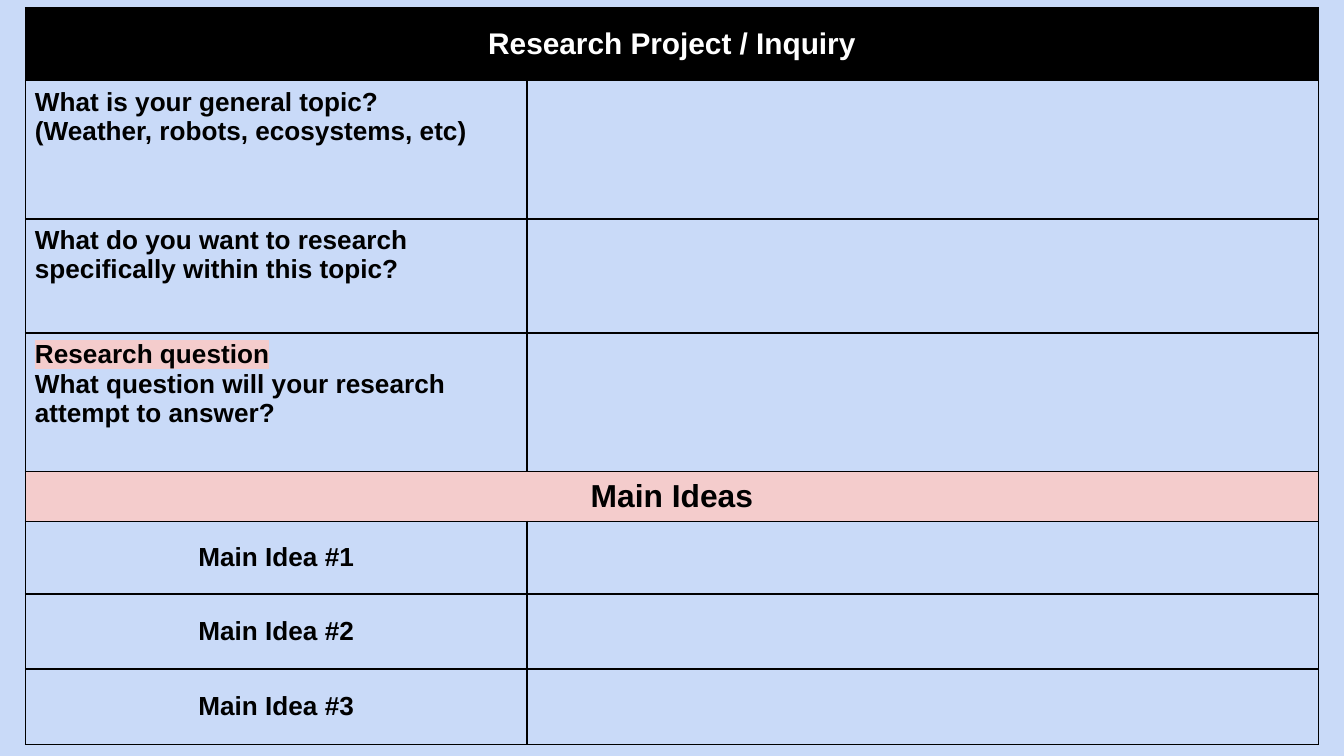
from lxml import etree
from pptx import Presentation
from pptx.dml.color import RGBColor
from pptx.enum import text
from pptx.oxml import ns
from pptx.util import Inches, Pt

BLACK = RGBColor(0x00, 0x00, 0x00)
WHITE = RGBColor(0xFF, 0xFF, 0xFF)
BLUE = RGBColor(0xC9, 0xDA, 0xF8)
PINK = RGBColor(0xF4, 0xCC, 0xCC)

# Row styles
TITLE = dict(size=16, color=WHITE, fill=BLACK, centered=True, merged=True)
SECTION = dict(size=17, color=BLACK, fill=PINK, centered=True, merged=True)
QUESTION = dict(size=14, color=BLACK, fill=None, centered=False, merged=False)
IDEA = dict(QUESTION, centered=True)

HIGHLIGHTED = "Research question"
SLIDE_WIDTH = 10
COLUMN_WIDTHS = (3.73, 5.89)
ROWS = [  # height, style, paragraphs
    (0.54, TITLE, ["Research Project / Inquiry"]),
    (1.03, QUESTION, ["What is your general topic?", "(Weather, robots, ecosystems, etc)"]),
    (0.85, QUESTION, ["What do you want to research specifically within this topic?"]),
    (1.03, QUESTION, [HIGHLIGHTED, "What question will your research attempt to answer?"]),
    (0.37, SECTION, ["Main Ideas"]),
    (0.54, IDEA, ["Main Idea #1"]),
    (0.56, IDEA, ["Main Idea #2"]),
    (0.56, IDEA, ["Main Idea #3"]),
]


def add_color(parent, tag, color):
    element = etree.SubElement(parent, ns.qn(tag))
    etree.SubElement(element, ns.qn("a:srgbClr"), val=str(color))
    return element


def format_cell(cell, fill):
    """Set margins, black borders and fill; borders must precede the fill in the XML."""
    cell.margin_left = cell.margin_right = Inches(0.07)
    cell.margin_top = cell.margin_bottom = Inches(0.05)
    properties = cell._tc.get_or_add_tcPr()
    for side in ("a:lnL", "a:lnR", "a:lnT", "a:lnB"):
        line = etree.SubElement(properties, ns.qn(side), w=str(Pt(1)))
        add_color(line, "a:solidFill", BLACK)
    if fill is None:
        cell.fill.background()
    else:
        cell.fill.solid()
        cell.fill.fore_color.rgb = fill


def highlight(run, color):
    properties = run._r.get_or_add_rPr()
    element = add_color(properties, "a:highlight", color)
    properties.find(ns.qn("a:solidFill")).addnext(element)


def write_cell(cell, paragraphs, style):
    if style["centered"]:
        cell.vertical_anchor = text.MSO_ANCHOR.MIDDLE
    frame = cell.text_frame
    for index, content in enumerate(paragraphs):
        paragraph = frame.add_paragraph() if index else frame.paragraphs[0]
        paragraph.alignment = text.PP_ALIGN.CENTER if style["centered"] else text.PP_ALIGN.LEFT
        run = paragraph.add_run()
        run.text = content
        run.font.name = "Arial"
        run.font.size = Pt(style["size"])
        run.font.bold = True
        run.font.color.rgb = style["color"]
        if content == HIGHLIGHTED:
            highlight(run, PINK)


presentation = Presentation()
presentation.slide_width = Inches(SLIDE_WIDTH)
presentation.slide_height = Inches(SLIDE_WIDTH * 9 / 16)
slide = presentation.slides.add_slide(presentation.slide_layouts[6])
slide.background.fill.solid()
slide.background.fill.fore_color.rgb = BLUE

table = slide.shapes.add_table(
    len(ROWS), len(COLUMN_WIDTHS), Inches(0.19), Inches(0.06),
    Inches(sum(COLUMN_WIDTHS)), Inches(sum(row[0] for row in ROWS)),
).table
table.first_row = table.horz_banding = False
for column, width in zip(table.columns, COLUMN_WIDTHS):
    column.width = Inches(width)

for row_index, (height, style, paragraphs) in enumerate(ROWS):
    row = table.rows[row_index]
    row.height = Inches(height)
    label, answer = row.cells
    for cell in (label, answer):
        format_cell(cell, style["fill"])
    if style["merged"]:
        label.merge(answer)
    write_cell(label, paragraphs, style)

presentation.save("out.pptx")
